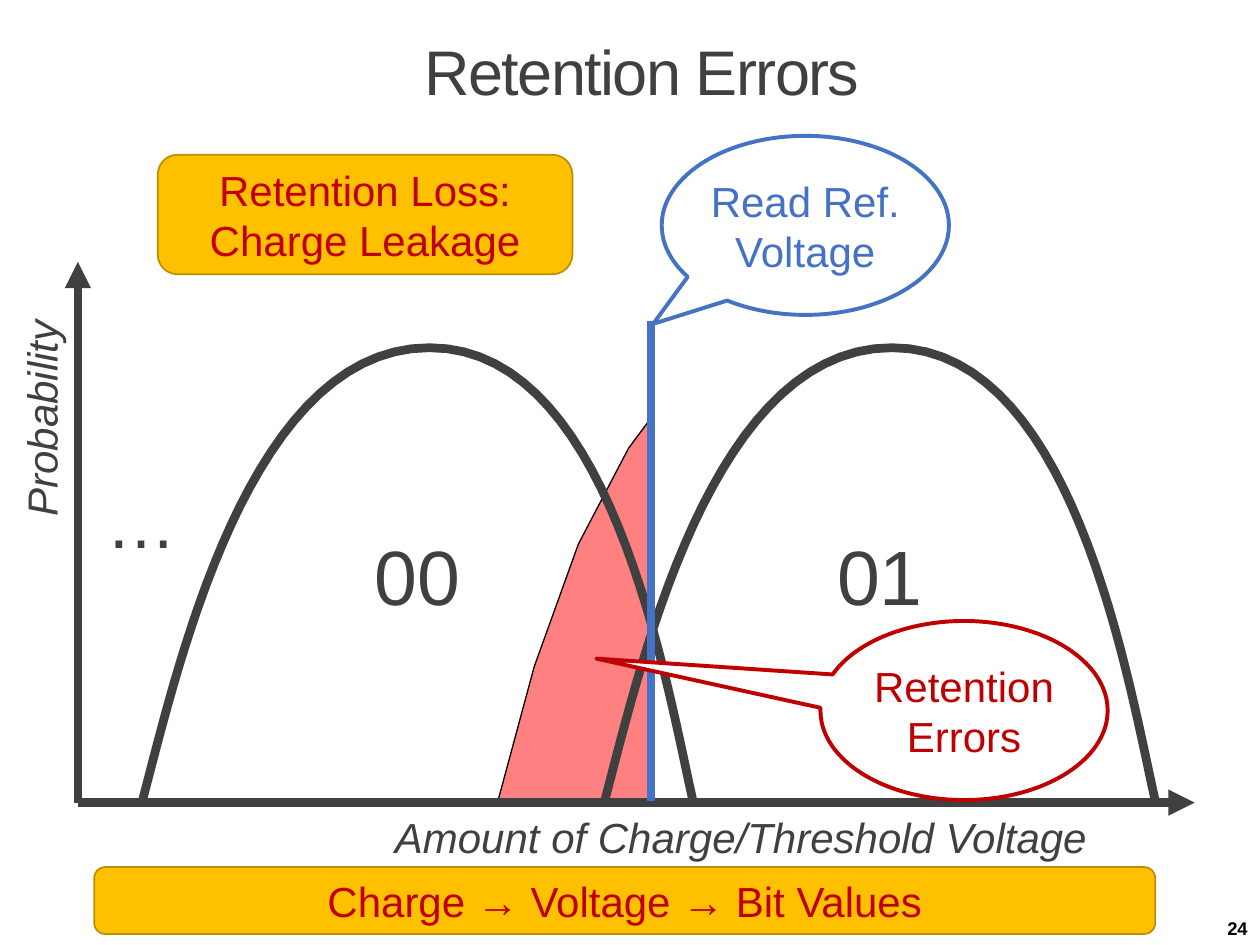
"""Build the slide on retention errors between two threshold voltage states."""
from dataclasses import dataclass

from lxml.etree import SubElement
from pptx import Presentation
from pptx.dml.color import RGBColor
from pptx.enum.shapes import MSO_CONNECTOR, MSO_SHAPE
from pptx.enum.text import MSO_ANCHOR as Anchor, PP_ALIGN as Align
from pptx.oxml.ns import qn
from pptx.util import Cm, Pt

DARK, BLUE, RED = "404040", "4472C4", "C00000"
WHITE, AMBER, AMBER_EDGE, PINK, BLACK = "FFFFFF", "FFC000", "BD8E00", "FF8080", "000000"
AXIS_X, AXIS_Y, CURVE_BASE = 1.57, 16.18, 16.15
BELL_HALVES = (
    ((0, 16.15), (0.71, 13.49), (2.13, 7.01), (5.79, 7.01)),
    ((5.79, 7.01), (9.42, 7.01), (10.52, 13.54), (11.1, 16.15)),
)
CURVE_STEPS = 30
LOSS_REGION = [(13.16, 8.38), (13.16, 16.18), (10.03, 16.18),
               (10.77, 13.44), (11.66, 10.97), (12.67, 9.04)]


@dataclass
class Box:
    left: float
    top: float
    width: float
    height: float

    def lengths(self):
        return Cm(self.left), Cm(self.top), Cm(self.width), Cm(self.height)


@dataclass
class Style:
    size: float = 24
    color: str = DARK
    italic: bool = False
    bold: bool = False
    align: Align = Align.CENTER


@dataclass
class Label:
    text: str
    box: Box
    style: Style
    anchor: Anchor = Anchor.TOP
    rotation: int = 0
    wrap: bool = True


@dataclass
class Callout:
    text: str
    left: float
    top: float
    color: str
    tip: tuple[float, float]


@dataclass
class Line:
    start: tuple[float, float]
    end: tuple[float, float]
    color: str
    width: float
    arrow: bool = False


CAPTION = Style(italic=True)
TITLE = Label("Retention Errors", Box(0, 0, 25.4, 3.02), Style(36), Anchor.MIDDLE)
LABELS = [
    Label("24", Box(22.76, 18.11, 2.64, 0.94),
          Style(10.5, BLACK, bold=True, align=Align.RIGHT), Anchor.BOTTOM),
    Label("Amount of Charge/Threshold Voltage", Box(5.79, 16.23, 18.29, 1.27), CAPTION),
    Label("Probability", Box(-2.31, 7.8, 6.27, 1.27), CAPTION, rotation=270),
    Label("…", Box(1.9, 9.53, 1.93, 1.96), Style(40, align=Align.LEFT), wrap=False),
]
LINES = [
    Line((AXIS_X, AXIS_Y), (AXIS_X, 5.28), DARK, 5, True),
    Line((AXIS_X, AXIS_Y), (24.08, AXIS_Y), DARK, 5, True),
]
READ_REFERENCE = Line((13.13, CURVE_BASE), (13.13, 6.48), BLUE, 4.5)
STATES = {"00": 2.87, "01": 12.19}
CALLOUTS = [
    Callout("Read Ref. Voltage", 13.34, 2.74, BLUE, (-0.53, 0.55)),
    Callout("Retention Errors", 16.54, 12.52, RED, (-1.28, -0.29)),
]
BANNERS = {
    "Charge → Voltage → Bit Values": Box(1.9, 17.48, 21.39, 1.35),
    "Retention Loss: Charge Leakage": Box(3.18, 3.12, 8.36, 2.41),
}


def rgb(color: str) -> RGBColor:
    return RGBColor.from_string(color)


def write(shape, text: str, style: Style, anchor=Anchor.MIDDLE):
    frame = shape.text_frame
    frame.text = text
    frame.vertical_anchor = anchor
    paragraph = frame.paragraphs[0]
    paragraph.alignment = style.align
    font = paragraph.runs[0].font
    font.name, font.size = "Arial", Pt(style.size)
    font.bold, font.italic = style.bold, style.italic
    font.color.rgb = rgb(style.color)
    return paragraph


def paint(shape, fill: str | None, line: str, width: float):
    shape.shadow.inherit = False
    if fill:
        shape.fill.solid()
        shape.fill.fore_color.rgb = rgb(fill)
    else:
        shape.fill.background()
    shape.line.color.rgb = rgb(line)
    shape.line.width = Pt(width)


def add_label(slide, label: Label):
    shape = slide.shapes.add_textbox(*label.box.lengths())
    shape.rotation = label.rotation
    shape.text_frame.word_wrap = label.wrap
    return shape, write(shape, label.text, label.style, label.anchor)


def add_title(slide):
    shape, paragraph = add_label(slide, TITLE)
    shape.text_frame.margin_left = Cm(0.73)
    paragraph.line_spacing = 0.9
    paragraph.runs[0].font._element.set("spc", "-90")


def add_line(slide, line: Line):
    ends = [Cm(value) for value in (*line.start, *line.end)]
    connector = slide.shapes.add_connector(MSO_CONNECTOR.STRAIGHT, *ends)
    connector.line.color.rgb = rgb(line.color)
    connector.line.width = Pt(line.width)
    if line.arrow:
        SubElement(connector.line._get_or_add_ln(), qn("a:tailEnd"), type="triangle")
    SubElement(connector._element.spPr, qn("a:effectLst"))


def add_outline(slide, points: list[tuple[float, float]], close: bool):
    corners = [(Cm(x), Cm(y)) for x, y in points]
    builder = slide.shapes.build_freeform(*corners[0])
    builder.add_line_segments(corners[1:], close=close)
    return builder.convert_to_shape()


def bezier(controls, t: float) -> tuple[float, float]:
    weights = ((1 - t) ** 3, 3 * t * (1 - t) ** 2, 3 * t * t * (1 - t), t ** 3)
    x, y = (sum(w * c for w, c in zip(weights, axis)) for axis in zip(*controls))
    return x, y


def add_state(slide, name: str, left: float):
    bell = [bezier(half, step / CURVE_STEPS)
            for half in BELL_HALVES for step in range(CURVE_STEPS + 1)]
    shape = add_outline(slide, [(left + x, y) for x, y in bell], close=False)
    paint(shape, None, DARK, 5)
    write(shape, name, Style(44))


def add_callout(slide, callout: Callout):
    box = Box(callout.left, callout.top, 5.79, 3.61)
    shape = slide.shapes.add_shape(MSO_SHAPE.OVAL_CALLOUT, *box.lengths())
    shape.adjustments[0], shape.adjustments[1] = callout.tip
    paint(shape, WHITE, callout.color, 2.25)
    frame = shape.text_frame
    frame.margin_left = frame.margin_right = frame.margin_top = frame.margin_bottom = 0
    write(shape, callout.text, Style(color=callout.color))


def add_banner(slide, text: str, box: Box):
    shape = slide.shapes.add_shape(MSO_SHAPE.ROUNDED_RECTANGLE, *box.lengths())
    paint(shape, AMBER, AMBER_EDGE, 1)
    write(shape, text, Style(color=RED))


def main():
    presentation = Presentation()
    presentation.slide_width, presentation.slide_height = Cm(25.4), Cm(19.05)
    slide = presentation.slides.add_slide(presentation.slide_layouts[6])
    paint(add_outline(slide, LOSS_REGION, close=True), PINK, BLACK, 0.75)
    add_title(slide)
    for label in LABELS:
        add_label(slide, label)
    for line in LINES:
        add_line(slide, line)
    for name, left in STATES.items():
        add_state(slide, name, left)
    add_line(slide, READ_REFERENCE)
    for callout in CALLOUTS:
        add_callout(slide, callout)
    for text, box in BANNERS.items():
        add_banner(slide, text, box)
    presentation.save("out.pptx")


if __name__ == "__main__":
    main()
